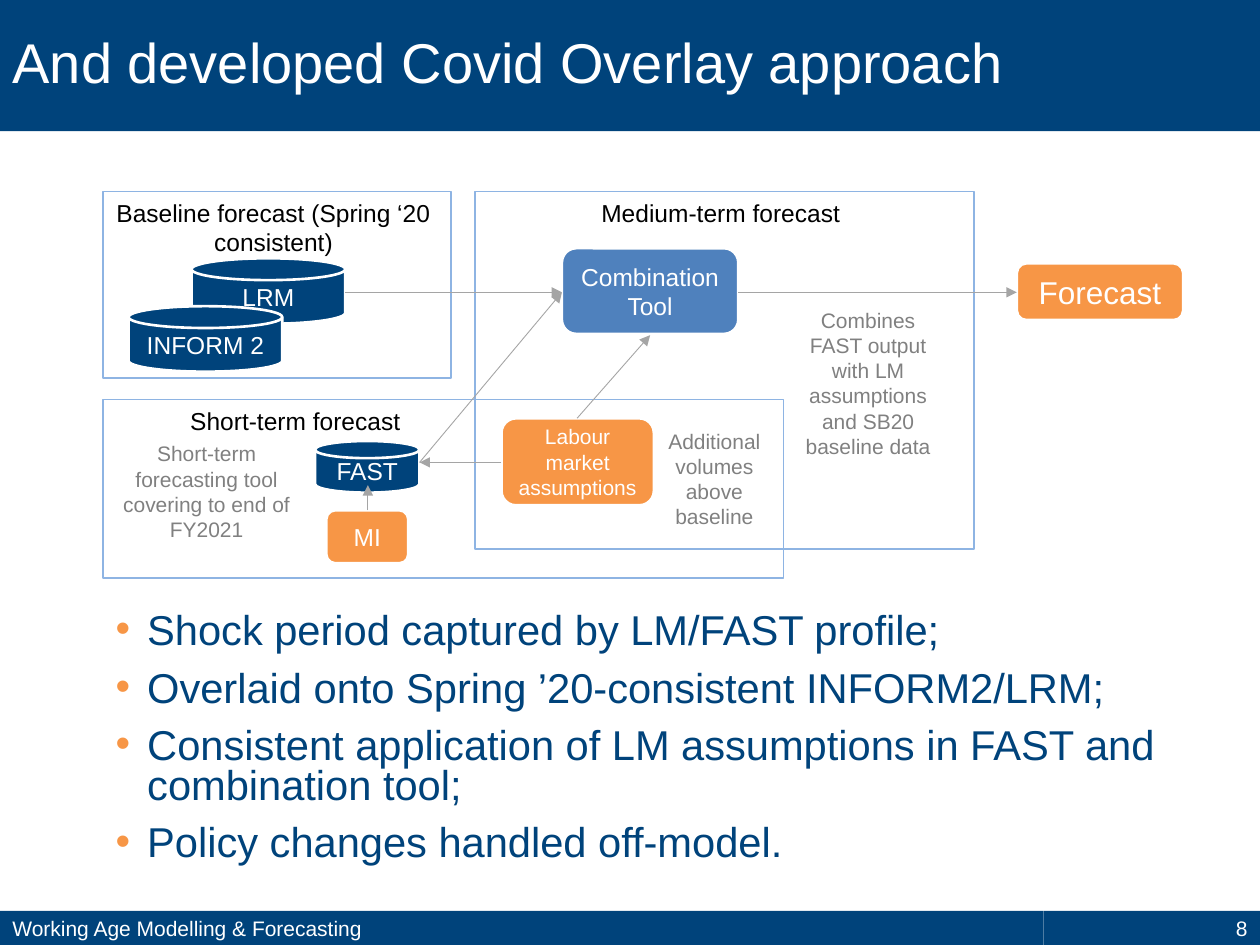
from typing import NamedTuple

from lxml import etree
from pptx import Presentation
from pptx import util as u
from pptx.dml.color import RGBColor
from pptx.enum import shapes, text
from pptx.oxml.ns import qn

COLOURS = {
    "navy": "00437B",
    "blue": "4F81BD",
    "frame": "8EB4E3",
    "orange": "F79646",
    "arrow": "A5A5A5",
    "note": "808080",
    "white": "FFFFFF",
    "black": "000000",
}
FONT = "Arial"
LEFT, CENTER, RIGHT = text.PP_ALIGN.LEFT, text.PP_ALIGN.CENTER, text.PP_ALIGN.RIGHT
TOP, MIDDLE = text.MSO_ANCHOR.TOP, text.MSO_ANCHOR.MIDDLE
RECT = shapes.MSO_SHAPE.RECTANGLE
DISK = shapes.MSO_SHAPE.FLOWCHART_MAGNETIC_DISK
PROCESS = shapes.MSO_SHAPE.FLOWCHART_ALTERNATE_PROCESS


class Box(NamedTuple):
    x: float
    y: float
    w: float
    h: float


class Frame(NamedTuple):
    label: str
    box: Box
    align: int = CENTER
    inset: float = 0.04


class Node(NamedTuple):
    label: str
    box: Box
    kind: int
    fill: str
    size: float = 14


class Note(NamedTuple):
    label: str
    box: Box


class Arrow(NamedTuple):
    x1: float
    y1: float
    x2: float
    y2: float


FRAMES = [
    Frame("Short-term forecast", Box(0.82, 3.17, 5.4, 1.42), LEFT, 0.69),
    Frame("Baseline forecast (Spring ‘20 consistent)", Box(0.82, 1.52, 2.76, 1.48)),
    Frame("Medium-term forecast", Box(3.77, 1.52, 3.96, 2.84)),
]
NODES = [
    Node("LRM", Box(1.52, 2.05, 1.22, 0.52), DISK, "navy"),
    Node("Combination Tool", Box(4.46, 1.97, 1.4, 0.68), PROCESS, "blue"),
    Node("FAST", Box(2.5, 3.5, 0.83, 0.41), DISK, "navy"),
    Node("Labour market\nassumptions", Box(3.98, 3.32, 1.21, 0.69), PROCESS, "orange", 12),
    Node("MI", Box(2.59, 4.05, 0.65, 0.42), PROCESS, "orange"),
    Node("INFORM 2", Box(1.02, 2.43, 1.22, 0.52), DISK, "navy"),
    Node("Forecast", Box(8.07, 2.09, 1.32, 0.45), PROCESS, "orange", 18),
]
ARROWS = [
    Arrow(2.92, 4.05, 2.92, 3.85),
    Arrow(4.58, 3.32, 5.16, 2.66),
    Arrow(3.33, 3.67, 4.46, 2.32),
    Arrow(2.74, 2.32, 4.46, 2.32),
    Arrow(3.98, 3.67, 3.33, 3.67),
    Arrow(5.86, 2.32, 8.07, 2.32),
]
NOTES = [
    Note("Additional volumes above baseline", Box(5.13, 3.35, 1.08, 0.91)),
    Note("Short-term forecasting tool covering to end of FY2021", Box(0.83, 3.45, 1.62, 0.91)),
    Note("Combines FAST output with LM assumptions and SB20 baseline data",
         Box(6.19, 2.39, 1.4, 1.51)),
]
BULLETS = """Shock period captured by LM/FAST profile;
Overlaid onto Spring ’20-consistent INFORM2/LRM;
Consistent application of LM assumptions in FAST and combination tool;
Policy changes handled off-model."""


def rgb(name: str) -> RGBColor:
    return RGBColor.from_string(COLOURS[name])


def inches(box: Box) -> list:
    return [u.Inches(v) for v in box]


def write(sp, content: str, *, size: float, colour: str = "white", align=CENTER,
          anchor=MIDDLE, inset: float = 0.1, spacing=None, before: float = 0,
          bullet: bool = False) -> None:
    tf = sp.text_frame
    tf.word_wrap = True
    tf.auto_size = text.MSO_AUTO_SIZE.NONE
    tf.vertical_anchor = anchor
    tf.margin_left, tf.margin_right = u.Inches(inset), u.Inches(0.1)
    tf.margin_top = tf.margin_bottom = u.Inches(0.05)
    tf.text = content
    for p in tf.paragraphs:
        p.alignment = align
        p.line_spacing = spacing
        p.space_before = u.Pt(before)
        if bullet:
            add_bullet(p)
        for r in p.runs:
            r.font.name, r.font.size = FONT, u.Pt(size)
            r.font.color.rgb = rgb(colour)


def add_bullet(p) -> None:
    pr = p._p.get_or_add_pPr()
    indent = u.Inches(0.25)
    pr.set("marL", str(indent))
    pr.set("indent", str(-indent))
    clr = etree.SubElement(pr, qn("a:buClr"))
    etree.SubElement(clr, qn("a:srgbClr"), val=COLOURS["orange"])
    etree.SubElement(pr, qn("a:buFont"), typeface=FONT)
    etree.SubElement(pr, qn("a:buChar"), char="•")


def add_box(s, kind, box: Box, fill=None, line=None, width: float = 1):
    sp = s.shapes.add_shape(kind, *inches(box))
    sp.shadow.inherit = False
    if fill:
        sp.fill.solid()
        sp.fill.fore_color.rgb = rgb(fill)
    else:
        sp.fill.background()
    if line:
        sp.line.color.rgb = rgb(line)
        sp.line.width = u.Pt(width)
    else:
        sp.line.fill.background()
    return sp


def add_frame(s, f: Frame) -> None:
    write(add_box(s, RECT, f.box, line="frame"), f.label, size=14, colour="black",
          align=f.align, anchor=TOP, inset=f.inset)


def add_node(s, n: Node) -> None:
    write(add_box(s, n.kind, n.box, n.fill, "white", 1.5), n.label, size=n.size)


def add_arrow(s, a: Arrow) -> None:
    c = s.shapes.add_connector(shapes.MSO_CONNECTOR.STRAIGHT, *[u.Inches(v) for v in a])
    c.line.color.rgb = rgb("arrow")
    c.line.width = u.Pt(0.5)
    etree.SubElement(c.line._get_or_add_ln(), qn("a:tailEnd"), type="triangle")
    etree.SubElement(c._element.spPr, qn("a:effectLst"))


def add_text(s, box: Box, content: str, **fmt) -> None:
    write(s.shapes.add_textbox(*inches(box)), content, anchor=TOP, **fmt)


def add_title(s, content: str) -> None:
    sp = s.shapes.title
    sp.left, sp.top, sp.width, sp.height = inches(Box(0, 0, 10, 1.04))
    sp.fill.solid()
    sp.fill.fore_color.rgb = rgb("navy")
    write(sp, content, size=32, align=LEFT, spacing=0.9)


def main() -> None:
    prs = Presentation()
    prs.slide_width, prs.slide_height = u.Inches(10), u.Inches(7.5)
    s = prs.slides.add_slide(prs.slide_layouts[5])
    add_title(s, "And developed Covid Overlay approach")
    add_text(s, Box(0.82, 4.82, 8.62, 2.18), BULLETS, size=23.8, colour="navy",
             align=LEFT, spacing=0.8, before=10, bullet=True)
    for label, x, w, align in (("Working Age Modelling & Forecasting", 0, 8.28, LEFT),
                               ("8", 8.28, 1.72, RIGHT)):
        write(add_box(s, RECT, Box(x, 7.23, w, 0.27), "navy"), label, size=12, align=align)
    for f in FRAMES:
        add_frame(s, f)
    for n in NODES:
        add_node(s, n)
    for a in ARROWS:
        add_arrow(s, a)
    for note in NOTES:
        add_text(s, note.box, note.label, size=12, colour="note")
    prs.save("out.pptx")


if __name__ == "__main__":
    main()
